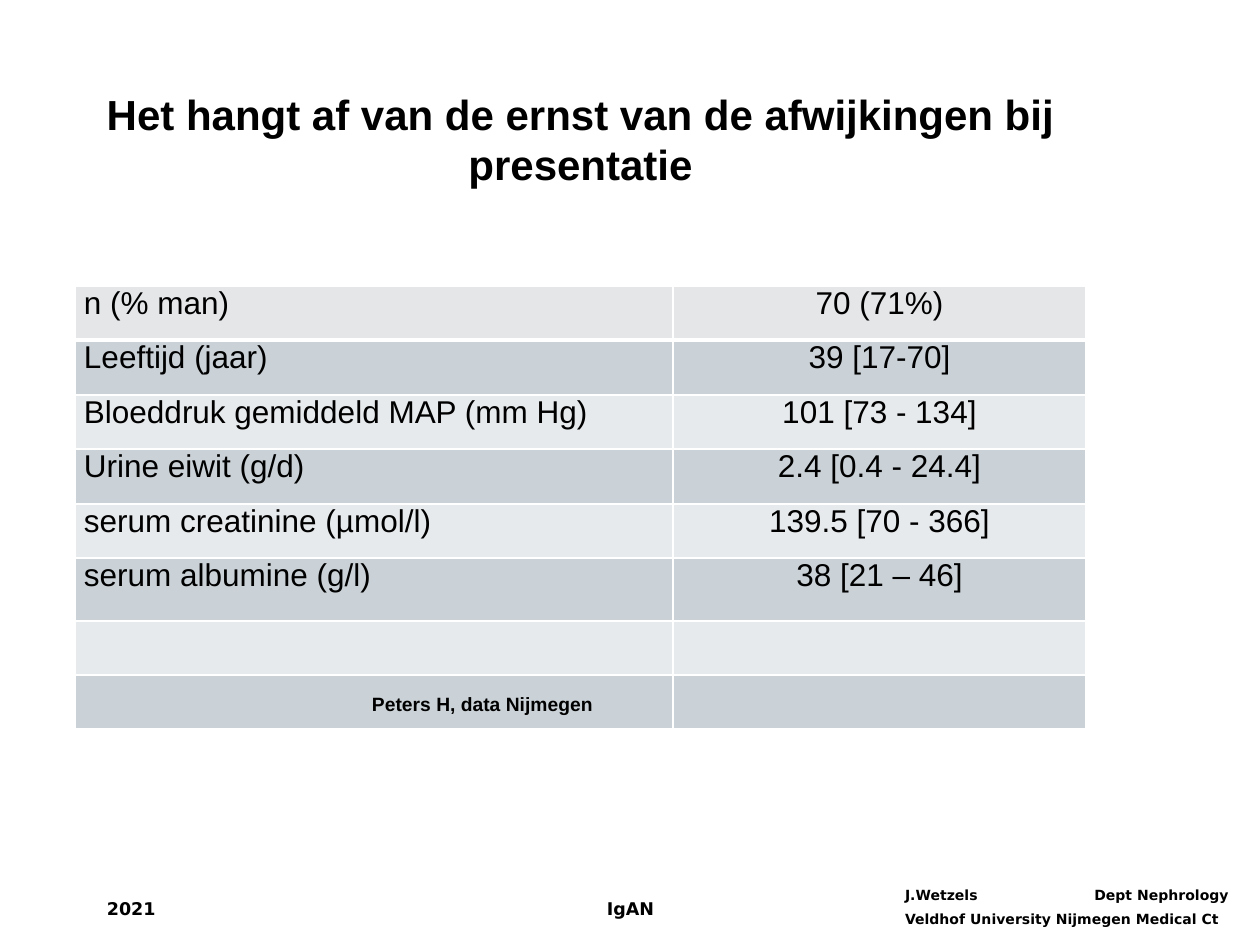
from lxml import etree
from pptx import Presentation
from pptx.dml.color import RGBColor
from pptx.enum.text import MSO_ANCHOR, PP_ALIGN
from pptx.oxml.ns import qn
from pptx.util import Pt

PX = 914400 / 126
LEFT, CENTER = PP_ALIGN.LEFT, PP_ALIGN.CENTER
TOP, MIDDLE = MSO_ANCHOR.TOP, MSO_ANCHOR.MIDDLE

BLACK = RGBColor(0x00, 0x00, 0x00)
WHITE = RGBColor(0xFF, 0xFF, 0xFF)
HEADER_FILL = RGBColor(0xE4, 0xE6, 0xE8)
DARK_BAND = RGBColor(0xCB, 0xD2, 0xD7)
LIGHT_BAND = RGBColor(0xE7, 0xEA, 0xEC)

BODY_FONT = "Arial"
FOOTER_FONT = "DejaVu Sans"

COL_EDGES = [75, 673, 1086]
ROW_EDGES = [286, 340, 395, 449, 504, 558, 621, 675, 729]
ROWS = [
    ("n (% man)", "70 (71%)"),
    ("Leeftijd (jaar)", "39 [17-70]"),
    ("Bloeddruk gemiddeld MAP (mm Hg)", "101 [73 - 134]"),
    ("Urine eiwit (g/d)", "2.4 [0.4 - 24.4]"),
    ("serum creatinine (µmol/l)", "139.5 [70 - 366]"),
    ("serum albumine (g/l)", "38 [21 – 46]"),
    ("", ""),
    ("", ""),
]


def px(n):
    return round(n * PX)


def style(p, size, font, bold, align=LEFT):
    p.alignment = align
    p.font.size = Pt(size)
    p.font.name = font
    p.font.bold = bold
    p.font.color.rgb = BLACK


def add_text(slide, box, lines, size, font, align=LEFT, anchor=TOP, inset=(13, 6)):
    tf = slide.shapes.add_textbox(*map(px, box)).text_frame
    tf.word_wrap = True
    tf.vertical_anchor = anchor
    tf.margin_left = tf.margin_right = px(inset[0])
    tf.margin_top = tf.margin_bottom = px(inset[1])
    tf.text = "\n".join(lines)
    for p in tf.paragraphs:
        style(p, size, font, True, align)
    return tf


def add_right_tab(p, position):
    tabs = etree.Element(qn("a:tabLst"))
    etree.SubElement(tabs, qn("a:tab"), pos=str(px(position)), algn="r")
    p.font._element.addprevious(tabs)


def add_border(cell, side, width):
    ln = etree.SubElement(cell._tc.get_or_add_tcPr(), qn(f"a:{side}"), w=str(Pt(width)))
    fill = etree.SubElement(ln, qn("a:solidFill"))
    etree.SubElement(fill, qn("a:srgbClr"), val=str(WHITE))


def fill_cell(cell, text, row, col):
    cell.margin_left = cell.margin_right = px(9)
    cell.margin_top = cell.margin_bottom = 0
    widths = {"lnL": 1, "lnR": 1, "lnT": 3 if row == 1 else 1, "lnB": 3 if row == 0 else 1}
    for side, width in widths.items():
        add_border(cell, side, width)
    cell.fill.solid()
    band = DARK_BAND if row % 2 else LIGHT_BAND
    cell.fill.fore_color.rgb = band if row else HEADER_FILL
    if text:
        cell.text = text
        style(cell.text_frame.paragraphs[0], 18, BODY_FONT, False, CENTER if col else LEFT)


def add_data_table(slide):
    left, top = COL_EDGES[0], ROW_EDGES[0]
    box = (left, top, COL_EDGES[-1] - left, ROW_EDGES[-1] - top)
    table = slide.shapes.add_table(len(ROWS), 2, *map(px, box)).table
    table.first_row = table.horz_banding = False
    for col, start, end in zip(table.columns, COL_EDGES, COL_EDGES[1:]):
        col.width = px(end - start)
    for row, start, end in zip(table.rows, ROW_EDGES, ROW_EDGES[1:]):
        row.height = px(end - start)
    for r, values in enumerate(ROWS):
        for c, text in enumerate(values):
            fill_cell(table.cell(r, c), text, r, c)


def add_affiliation(slide):
    lines = ["J.Wetzels\tDept Nephrology", "Veldhof University Nijmegen Medical Ct"]
    tf = add_text(slide, (892, 880, 357, 55), lines, 8, FOOTER_FONT)
    name, institute = tf.paragraphs
    add_right_tab(name, 324)
    institute.space_before = Pt(4.5)


def main():
    prs = Presentation()
    prs.slide_width, prs.slide_height = px(1260), px(945)
    slide = prs.slides.add_slide(prs.slide_layouts[6])
    add_affiliation(slide)
    add_data_table(slide)
    title = ["Het hangt af van de ernst van de afwijkingen bij presentatie"]
    add_text(slide, (64, 81, 1033, 115), title, 24, BODY_FONT, CENTER, MIDDLE)
    add_text(slide, (94, 892, 262, 32), ["2021"], 10, FOOTER_FONT)
    add_text(slide, (431, 892, 399, 32), ["IgAN"], 10, FOOTER_FONT, CENTER)
    credit = add_text(slide, (372, 694, 541, 32), ["Peters H, data Nijmegen"], 11, BODY_FONT, inset=(0, 0))
    credit.paragraphs[0].line_spacing = 0.93
    prs.save("out.pptx")


if __name__ == "__main__":
    main()
